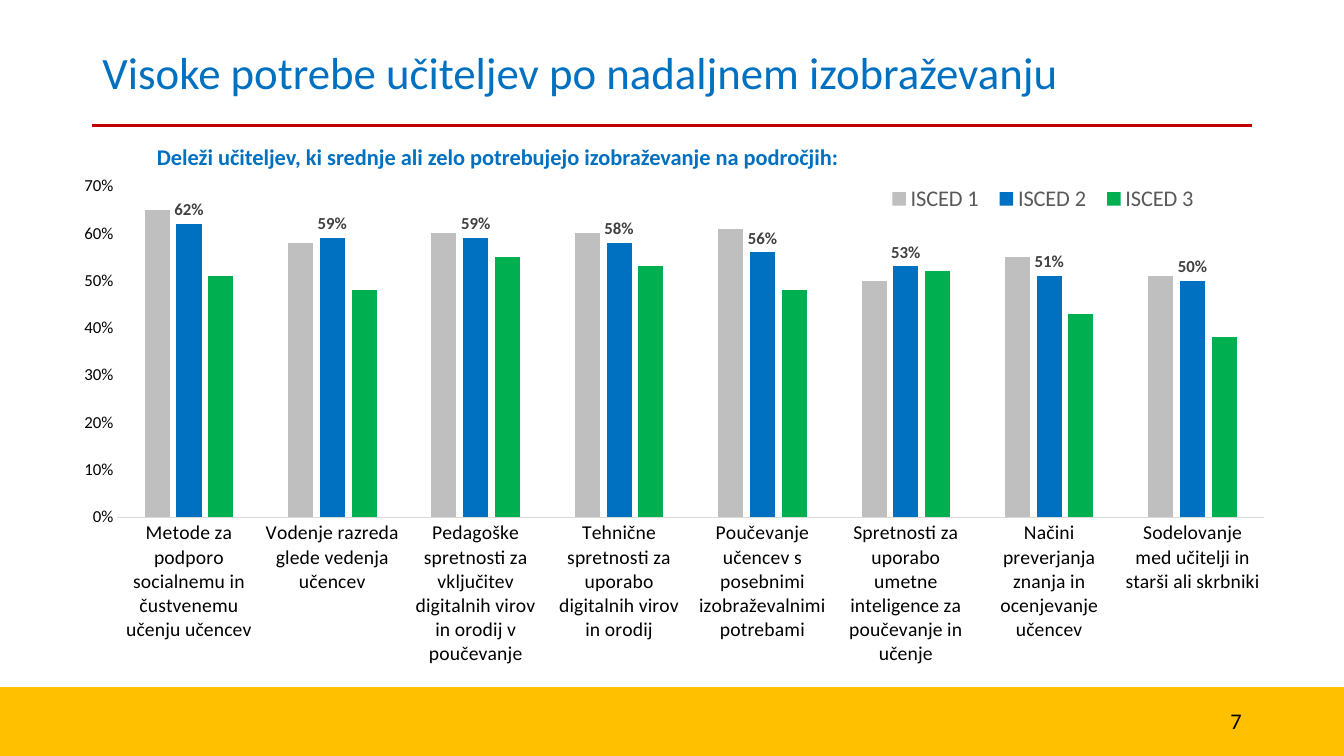
from dataclasses import dataclass

from lxml import etree
from pptx import Presentation
from pptx.chart.data import CategoryChartData
from pptx.dml.color import RGBColor
from pptx.enum.chart import XL_CHART_TYPE, XL_LABEL_POSITION, XL_LEGEND_POSITION, XL_TICK_MARK
from pptx.enum.shapes import MSO_CONNECTOR, MSO_SHAPE
from pptx.enum.text import MSO_ANCHOR, MSO_AUTO_SIZE, PP_ALIGN
from pptx.oxml.ns import qn
from pptx.util import Inches, Pt

CLUSTERED = XL_CHART_TYPE.COLUMN_CLUSTERED
ABOVE_BAR = XL_LABEL_POSITION.OUTSIDE_END
LEGEND_BOTTOM = XL_LEGEND_POSITION.BOTTOM
NO_TICK = XL_TICK_MARK.NONE
STRAIGHT = MSO_CONNECTOR.STRAIGHT
RECTANGLE = MSO_SHAPE.RECTANGLE
MIDDLE = MSO_ANCHOR.MIDDLE
LEFT, RIGHT = PP_ALIGN.LEFT, PP_ALIGN.RIGHT
GROW = MSO_AUTO_SIZE.SHAPE_TO_FIT_TEXT
TITLE_ONLY = 5
COLUMNS, ROWS = 160, 90


@dataclass(frozen=True)
class Theme:
    font: str = "Calibri"
    blue: str = "0070C0"
    grey: str = "BFBFBF"
    green: str = "00B050"
    red: str = "C00000"
    gold: str = "FFC000"
    white: str = "FFFFFF"
    black: str = "000000"
    axis_line: str = "D9D9D9"
    legend_text: str = "595959"
    label_text: str = "404040"
    title_size: int = 32
    heading_size: int = 16
    category_size: int = 14
    value_size: int = 12
    chart_size: int = 10


class SlideBuilder:
    def __init__(self, deck, theme):
        self.theme = theme
        self.column = deck.slide_width / COLUMNS
        self.row = deck.slide_height / ROWS
        self.slide = deck.slides.add_slide(deck.slide_layouts[TITLE_ONLY])

    def place(self, left, top, width, height):
        return (round(left * self.column), round(top * self.row),
                round(width * self.column), round(height * self.row))

    def style(self, font, size, color, bold=False):
        font.name = self.theme.font
        font.size = Pt(size)
        font.bold = bold
        font.color.rgb = RGBColor.from_string(color)

    def set_text(self, shape, text, size, color, align=LEFT, bold=False):
        frame = shape.text_frame
        frame.text = text
        frame.vertical_anchor = MIDDLE
        paragraph = frame.paragraphs[0]
        paragraph.alignment = align
        self.style(paragraph.runs[0].font, size, color, bold)
        return frame

    def title(self, text, area):
        heading = self.slide.shapes.title
        heading.left, heading.top, heading.width, heading.height = self.place(*area)
        frame = self.set_text(heading, text, self.theme.title_size, self.theme.blue)
        frame.paragraphs[0].line_spacing = 0.9

    def band(self, area, color):
        band = self.slide.shapes.add_shape(RECTANGLE, *self.place(*area))
        band.shadow.inherit = False
        band.fill.solid()
        band.fill.fore_color.rgb = RGBColor.from_string(color)
        band.line.fill.background()
        return band

    def rule(self, left, right, top):
        x, y, width, _ = self.place(left, top, right - left, 0)
        rule = self.slide.shapes.add_connector(STRAIGHT, x, y, x + width, y)
        rule.line.color.rgb = RGBColor.from_string(self.theme.red)
        rule.line.width = Pt(2)
        etree.SubElement(rule._element.spPr, qn("a:effectLst"))

    def heading(self, text, area):
        box = self.band(area, self.theme.white)
        frame = self.set_text(box, text, self.theme.heading_size, self.theme.blue, bold=True)
        frame.word_wrap = False
        frame.auto_size = GROW

    def page_number(self, text, area):
        box = self.slide.shapes.add_textbox(*self.place(*area))
        frame = self.set_text(box, text, self.theme.heading_size, self.theme.black, RIGHT)
        frame.word_wrap = True

    def lay_out(self, part, index, percentages, inner=False):
        for previous in part.findall(qn("c:layout")):
            part.remove(previous)
        layout = etree.Element(qn("c:layout"))
        manual = etree.SubElement(layout, qn("c:manualLayout"))
        settings = [("layoutTarget", "inner")] if inner else []
        settings += [("xMode", "edge"), ("yMode", "edge")]
        settings += [(tag, share / 100) for tag, share in zip("xywh", percentages)]
        for tag, value in settings:
            etree.SubElement(manual, qn(f"c:{tag}")).set("val", str(value))
        part.insert(index, layout)

    def column_chart(self, categories, series, colors, labelled, area):
        theme = self.theme
        data = CategoryChartData(number_format="0%")
        data.categories = categories
        for name, values in series.items():
            data.add_series(name, [value / 100 for value in values])
        chart = self.slide.shapes.add_chart(CLUSTERED, *self.place(*area), data).chart
        self.style(chart.font, theme.chart_size, theme.black)
        chart.has_title = False

        plot = chart.plots[0]
        plot.gap_width, plot.overlap = 219, -27
        plot.vary_by_categories = False
        for bars, color in zip(plot.series, colors):
            bars.format.fill.solid()
            bars.format.fill.fore_color.rgb = RGBColor.from_string(color)
            if bars.name == labelled:
                labels = bars.data_labels
                labels.show_value = True
                labels.number_format, labels.number_format_is_linked = "0%", False
                labels.position = ABOVE_BAR
                self.style(labels.font, theme.value_size, theme.label_text, True)

        for axis, size in ((chart.category_axis, theme.category_size),
                           (chart.value_axis, theme.value_size)):
            axis.has_major_gridlines = False
            axis.major_tick_mark = axis.minor_tick_mark = NO_TICK
            self.style(axis.tick_labels.font, size, theme.black)
        base_line = chart.category_axis.format.line
        base_line.color.rgb = RGBColor.from_string(theme.axis_line)
        base_line.width = Pt(0.75)
        scale = chart.value_axis
        scale.minimum_scale, scale.maximum_scale, scale.major_unit = 0, 0.7, 0.1
        scale.format.line.fill.background()
        scale.tick_labels.number_format = "0%"
        scale.tick_labels.number_format_is_linked = False

        chart.has_legend = True
        legend = chart.legend
        legend.position = LEGEND_BOTTOM
        legend.include_in_layout = False
        self.style(legend.font, theme.heading_size, theme.legend_text)
        self.lay_out(legend._element, 1, (67, 2, 27, 7))
        plot_area = chart.element.xpath("c:chart/c:plotArea")[0]
        self.lay_out(plot_area, 0, (4.4, 3, 94.3, 64.2), inner=True)


NEEDS = {
    "Metode za podporo socialnemu in čustvenemu učenju učencev": (65, 62, 51),
    "Vodenje razreda glede vedenja učencev": (58, 59, 48),
    "Pedagoške spretnosti za vključitev digitalnih virov in orodij v poučevanje": (60, 59, 55),
    "Tehnične spretnosti za uporabo digitalnih virov in orodij": (60, 58, 53),
    "Poučevanje učencev s posebnimi izobraževalnimi potrebami": (61, 56, 48),
    "Spretnosti za uporabo umetne inteligence za poučevanje in učenje": (50, 53, 52),
    "Načini preverjanja znanja in ocenjevanje učencev": (55, 51, 43),
    "Sodelovanje med učitelji in starši ali skrbniki": (51, 50, 38),
}
LEVELS = ("ISCED 1", "ISCED 2", "ISCED 3")


def main():
    deck = Presentation()
    deck.slide_width, deck.slide_height = Inches(13.33), Inches(7.5)
    theme = Theme()
    page = SlideBuilder(deck, theme)
    page.band((0, 81.8, COLUMNS, 8.2), theme.gold)
    page.rule(11, 149, 14.9)
    page.title("Visoke potrebe učiteljev po nadaljnem izobraževanju", (11, 4.8, 138, 8.2))
    page.page_number("7", (138.5, 83.4, 10.5, 4.8))
    page.column_chart(list(NEEDS), dict(zip(LEVELS, zip(*NEEDS.values()))),
                      (theme.grey, theme.blue, theme.green), "ISCED 2",
                      (7.6, 20.3, 144.8, 61.4))
    page.heading("Deleži učiteljev, ki srednje ali zelo potrebujejo izobraževanje na področjih:",
                 (17.5, 16.4, 83.9, 4.4))
    deck.save("out.pptx")


if __name__ == "__main__":
    main()
